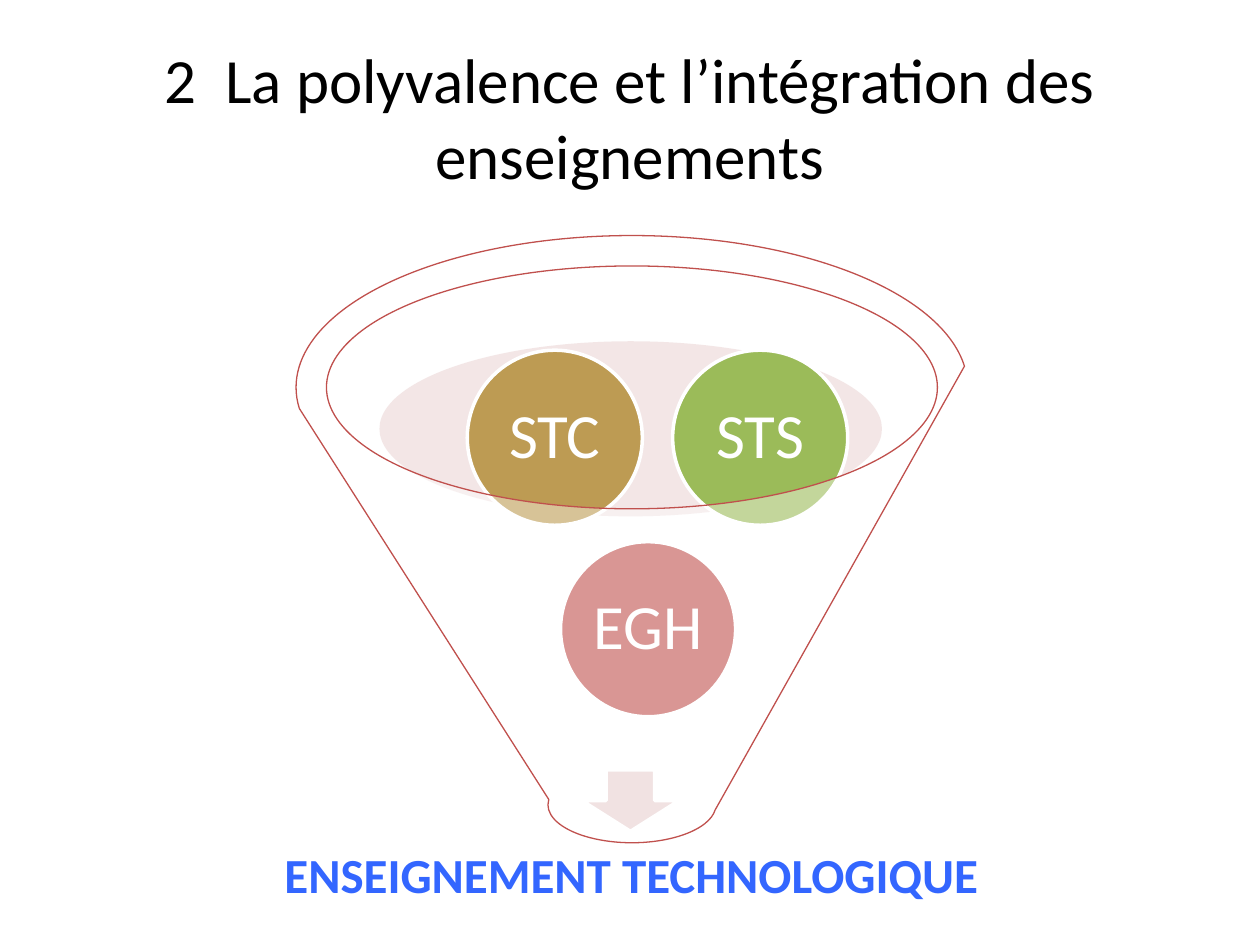
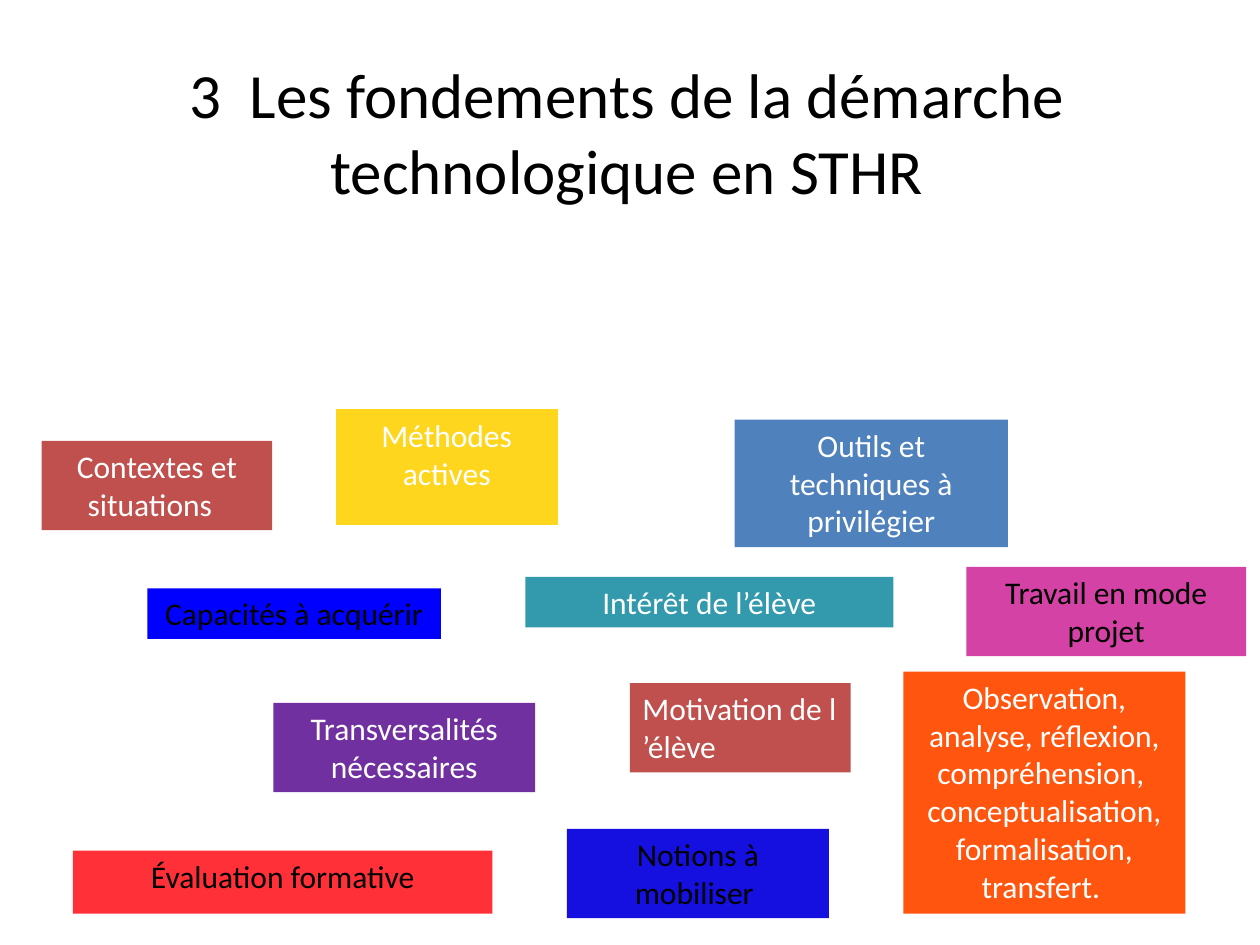
import pptx
import pptx.util
import pptx.dml.color
import pptx.enum.shapes
import pptx.enum.text
import pptx.oxml
import pptx.oxml.ns

Cm = pptx.util.Cm
Pt = pptx.util.Pt
KIND = pptx.enum.shapes.MSO_SHAPE
ALIGN = pptx.enum.text.PP_ALIGN
ANCHOR = pptx.enum.text.MSO_ANCHOR

COLORS = {
    "black": "000000", "white": "FFFFFF", "brick": "C0504D",
    "sand": "BD9B53", "green": "9BBB59", "rose": "E2C2C2",
    "blush": "E8D0D0", "azure": "3366FF", "yellow": "FFD61E",
    "blue": "0000FF", "teal": "329AAC", "steel": "4F81BD",
    "purple": "7030A0", "pink": "D542A5", "red": "FF3038",
    "navy": "1510DF", "orange": "FF550E",
}


def rgb(name):
    return pptx.dml.color.RGBColor.from_string(COLORS[name])


def put(item, values):
    for key, value in values.items():
        setattr(item, key, value)


class Deck:
    """Holds the style and the current slide."""

    font = "Calibri"

    def __init__(self):
        self.prs = pptx.Presentation()
        put(self.prs, {"slide_width": Cm(25.4), "slide_height": Cm(19.05)})
        self.slide = None

    def page(self, title, place):
        layout = self.prs.slide_layouts.get_by_name("Title Only")
        self.slide = self.prs.slides.add_slide(layout)
        head = self.slide.shapes.title
        put(head, dict(zip(("left", "top", "width", "height"), map(Cm, place))))
        self.label(head, title, 36, "black", ANCHOR.MIDDLE)

    def label(self, item, text, size, color, anchor=ANCHOR.TOP,
              align=ALIGN.CENTER, bold=False, inset=None, space=None):
        frame = item.text_frame
        frame.text = text
        put(frame, {"word_wrap": True, "vertical_anchor": anchor})
        if inset is not None:
            sides = ("left", "top", "right", "bottom")
            put(frame, {f"margin_{side}": Cm(inset) for side in sides})
        para = frame.paragraphs[0]
        put(para, {"alignment": align, "line_spacing": space})
        font = para.runs[0].font
        put(font, {"name": self.font, "size": Pt(size), "bold": bold})
        font.color.rgb = rgb(color)

    def shape(self, kind, place, fill, line=None, width=0.75, alpha=None):
        item = self.slide.shapes.add_shape(kind, *map(Cm, place))
        item.shadow.inherit = False
        item.fill.solid()
        item.fill.fore_color.rgb = rgb(fill)
        if alpha is not None:
            solid = item.element.spPr.find(pptx.oxml.ns.qn("a:solidFill"))
            mark = pptx.oxml.parse_xml(
                f'<a:alpha {pptx.oxml.ns.nsdecls("a")} val="{alpha * 1000}"/>')
            solid[0].append(mark)
        if line:
            item.line.color.rgb = rgb(line)
            item.line.width = Pt(width)
        else:
            item.line.fill.background()
        return item

    def ball(self, text, left, top, fill):
        item = self.shape(KIND.OVAL, (left, top, 3.53, 3.53), fill, "white", 2)
        self.label(item, text, 36, "white", ANCHOR.MIDDLE, inset=0.13, space=0.9)

    def result(self, text, place):
        item = self.slide.shapes.add_textbox(*map(Cm, place))
        self.label(item, text, 28, "azure", ANCHOR.MIDDLE, bold=True,
                   inset=0.56, space=0.9)

    def box(self, text, place, fill, color="white", line=None,
            align=ALIGN.CENTER):
        item = self.shape(KIND.RECTANGLE, place, fill, line)
        self.label(item, text, 18, color, align=align)


def main():
    deck = Deck()

    # Funnel of subjects
    deck.page("2  La polyvalence et l’intégration des enseignements",
              (1.27, 0.76, 22.86, 3.18))
    deck.shape(KIND.OVAL, (7.65, 6.88, 10.13, 3.53), "rose", alpha=40)
    deck.shape(KIND.DOWN_ARROW, (11.73, 15.52, 1.96, 1.24), "blush", "white", 2)
    deck.result("ENSEIGNEMENT TECHNOLOGIQUE", (1.75, 16.51, 21.95, 2.36))
    for ball in (("EGH", 11.3, 10.92, "brick"),
                 ("STC", 9.42, 7.06, "sand"),
                 ("STS", 13.56, 7.06, "green")):
        deck.ball(*ball)
    deck.shape(KIND.FUNNEL, (5.97, 4.75, 13.54, 12.24), "white", "brick",
               alpha=40)

    # Scattered notions
    deck.page("3  Les fondements de la démarche technologique en STHR",
              (1.47, 0.84, 22.33, 3.61))
    one, two = 1.02, 1.8  # heights for one and two lines
    deck.box("Contextes et situations  ", (0.84, 8.89, 4.65, two), "brick")
    deck.box("Méthodes actives", (6.78, 8.26, 4.45, 2.32), "yellow",
             line="yellow")
    deck.box("Capacités à acquérir", (2.97, 11.86, 5.92, one), "blue", "black")
    deck.box("Intérêt de l’élève", (10.59, 11.63, 7.42, one), "teal")
    deck.box("Outils et techniques à privilégier",
             (14.81, 8.46, 5.51, 2.57), "steel")
    deck.box("Transversalités nécessaires", (5.51, 14.17, 5.28, two), "purple")
    deck.box("Motivation de l ’élève", (12.7, 13.77, 4.45, two), "brick",
             align=ALIGN.LEFT)
    deck.box("Travail en mode projet", (19.48, 11.43, 5.64, two), "pink",
             "black")
    deck.box("Évaluation formative", (1.47, 17.15, 8.46, 1.27), "red", "black")
    deck.box("Notions à mobiliser ", (11.43, 16.71, 5.28, two), "navy", "black")
    deck.box("Observation, analyse, réflexion, compréhension,  "
             "conceptualisation, formalisation, transfert. ",
             (18.21, 13.54, 5.69, 4.88), "orange")

    deck.prs.save("out.pptx")


if __name__ == "__main__":
    main()
